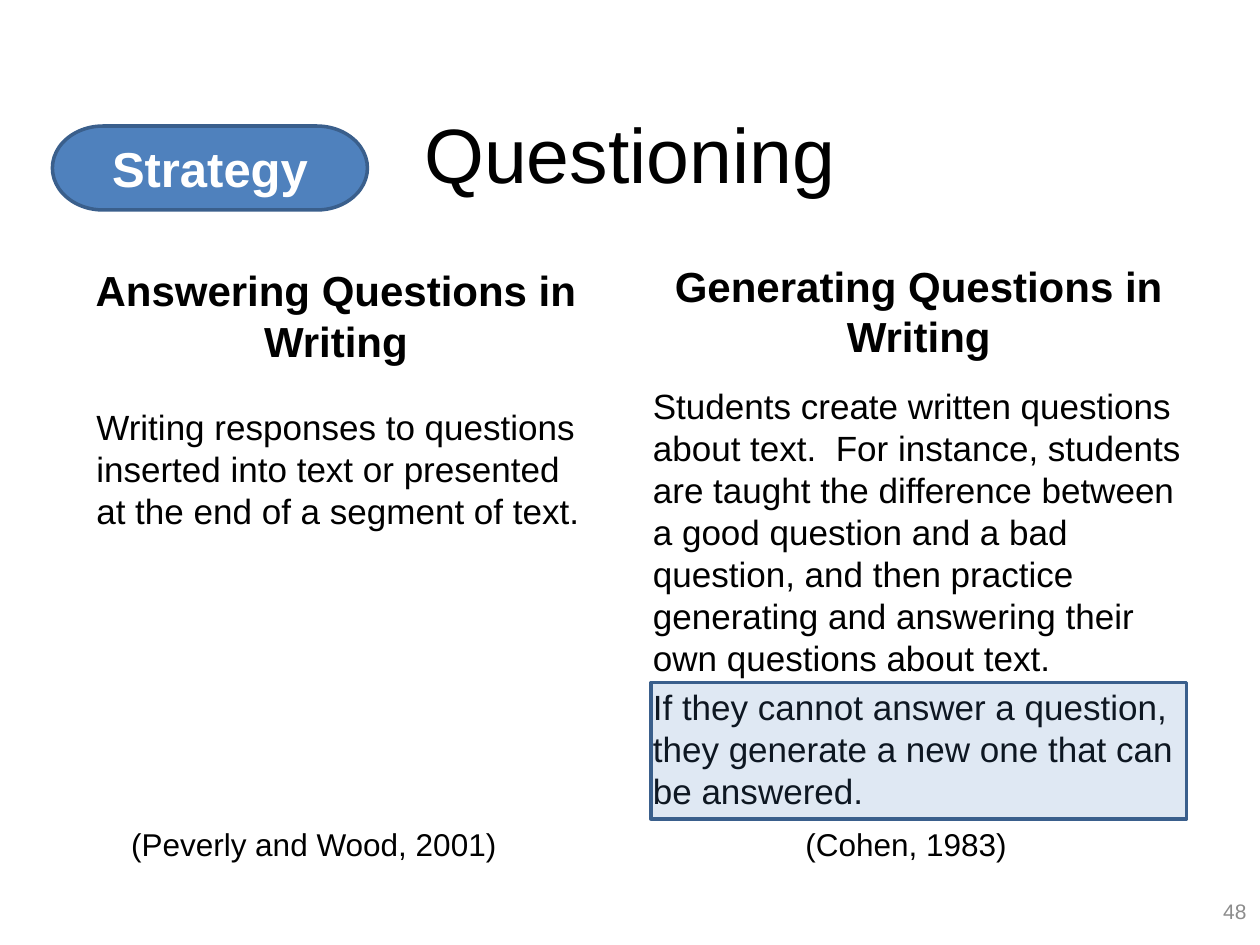
import pptx
import pptx.dml.color
import pptx.enum.shapes
import pptx.enum.text
import pptx.oxml.ns
import pptx.util
from lxml import etree

COLORS = {"text": "000000", "accent": "4F81BD", "edge": "3A5F8C",
          "badge_text": "FFFFFF", "number": "8C8C8C"}
FONT = "Arial"
CELLS_PER_INCH = 12  # the slide is a grid of 120 columns by 90 rows

ALIGN = pptx.enum.text.PP_ALIGN
ANCHOR = pptx.enum.text.MSO_ANCHOR
PRESET = pptx.enum.shapes.MSO_SHAPE


def grid(cells):
    return pptx.util.Inches(cells / CELLS_PER_INCH)


def rgb(name):
    return pptx.dml.color.RGBColor.from_string(COLORS[name])


def write(frame, paragraphs, size, color="text", bold=False,
          align=ALIGN.LEFT, anchor=ANCHOR.TOP):
    """Fill a text frame; later paragraphs get a fifth of a line before them."""
    frame.word_wrap = True
    frame.vertical_anchor = anchor
    for index, wording in enumerate(paragraphs):
        paragraph = frame.add_paragraph() if index else frame.paragraphs[0]
        paragraph.alignment = align
        if index:
            paragraph.space_before = pptx.util.Pt(size * 0.2)
        run = paragraph.add_run()
        run.text = wording
        run.font.name = FONT
        run.font.size = pptx.util.Pt(size)
        run.font.bold = bold
        run.font.color.rgb = rgb(color)


def add_text(slide, cells, paragraphs, size, indent=0, **style):
    box = slide.shapes.add_textbox(*map(grid, cells))
    write(box.text_frame, paragraphs, size, **style)
    box.text_frame.margin_left += grid(indent)


def add_panel(slide, preset, cells, opacity=100):
    panel = slide.shapes.add_shape(preset, *map(grid, cells))
    panel.shadow.inherit = False
    panel.fill.solid()
    panel.fill.fore_color.rgb = rgb("accent")
    panel.line.color.rgb = rgb("edge")
    panel.line.width = pptx.util.Pt(2)
    if opacity < 100:
        fill_color = panel.fill._xPr.find(".//" + pptx.oxml.ns.qn("a:srgbClr"))
        alpha = etree.SubElement(fill_color, pptx.oxml.ns.qn("a:alpha"))
        alpha.set("val", str(opacity * 1000))
    return panel


def add_column(slide, heading, heading_cells, body, body_cells,
               citation, citation_cells, citation_indent=0):
    add_text(slide, heading_cells, [heading], 24, bold=True,
             align=ALIGN.CENTER, anchor=ANCHOR.BOTTOM)
    add_text(slide, body_cells, body, 20)
    add_text(slide, citation_cells, [citation], 18, indent=citation_indent)


def main():
    deck = pptx.Presentation()
    deck.slide_width, deck.slide_height = grid(120), grid(90)
    slide = deck.slides.add_slide(deck.slide_layouts[6])

    # Title
    add_text(slide, (6, 7, 108, 15), ["Questioning"], 44,
             align=ALIGN.CENTER, anchor=ANCHOR.MIDDLE)

    # Two ways of questioning, each with its source
    add_column(
        slide,
        "Answering Questions in Writing", (5, 27, 54, 8.4),
        ["Writing responses to questions inserted into text or presented "
         "at the end of a segment of text."], (8, 38, 49, 25),
        "(Peverly and Wood, 2001)", (11.3, 78, 38.8, 4.8))
    add_column(
        slide,
        "Generating Questions in Writing", (61, 27, 53, 8),
        ["Students create written questions about text.  For instance, "
         "students are taught the difference between a good question and a "
         "bad question, and then practice generating and answering their own "
         "questions about text.",
         "If they cannot answer a question, they generate a new one that can "
         "be answered."], (61, 36, 53, 41.6),
        "(Cohen, 1983)", (68, 78, 39, 4.8), citation_indent=7.5)

    # Strategy badge
    badge = add_panel(slide, PRESET.FLOWCHART_TERMINATOR, (5, 12, 30, 8))
    write(badge.text_frame, ["Strategy"], 28, color="badge_text", bold=True,
          align=ALIGN.CENTER, anchor=ANCHOR.MIDDLE)

    # Slide number
    add_text(slide, (108, 84, 11.9, 5.6), ["48"], 12, color="number",
             align=ALIGN.RIGHT, anchor=ANCHOR.MIDDLE)

    # Tint over the last point
    add_panel(slide, PRESET.RECTANGLE, (62, 65, 51, 13), opacity=18)

    deck.save("out.pptx")


if __name__ == "__main__":
    main()
